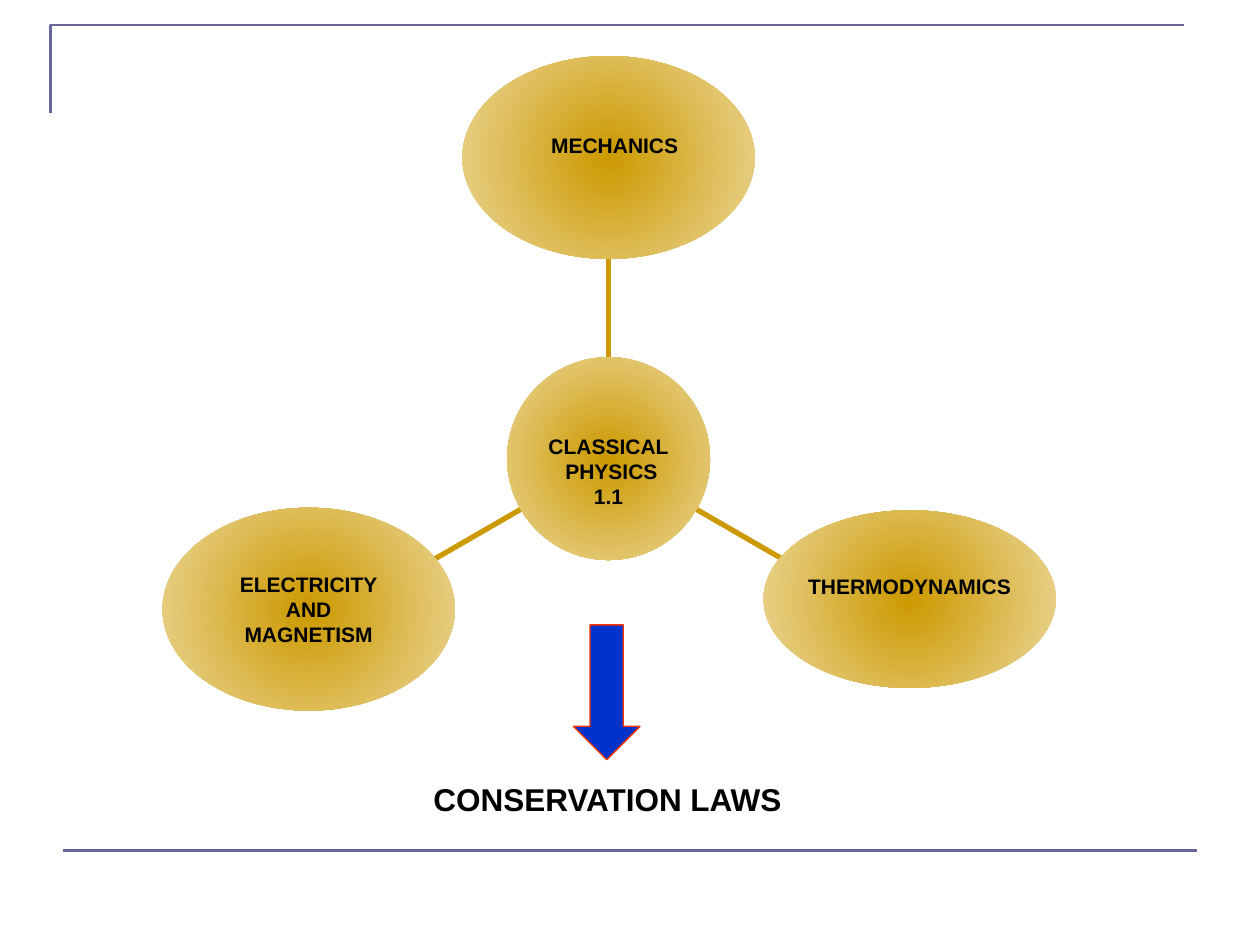
from dataclasses import dataclass
from math import cos, radians, sin

from lxml.etree import SubElement
from pptx import Presentation
from pptx.dml.color import RGBColor
from pptx.enum.shapes import MSO_CONNECTOR, MSO_SHAPE
from pptx.enum.text import MSO_ANCHOR, PP_ALIGN
from pptx.oxml.ns import qn
from pptx.util import Inches, Pt

# Grid of square cells: 100 columns by 75 rows
COLUMNS, ROWS = 100, 75
CELL = Inches(10) // COLUMNS

GOLD, PALE_GOLD = "CC9900", "EBD799"
FRAME, BLUE, RED, BLACK = "666699", "0033CC", "FF3300", "000000"

HUB_X, HUB_Y, HUB_SIZE = 48.3, 36.4, 16.1
SPOKE_START, SPOKE_END = HUB_SIZE / 2, HUB_SIZE
SPOKE_ANGLES = (150, 30, -90)


@dataclass
class Bubble:
    """An ellipse given by its centre and size, with its text insets, in cells."""
    lines: tuple[str, ...]
    x: float
    y: float
    width: float = 23.2
    height: float = 16.1
    inset_left: float = 0
    inset_top: float = 0
    inset_bottom: float = 0


BUBBLES = (
    Bubble(("ELECTRICITY", "AND", "MAGNETISM"), 24.5, 48.35),
    Bubble(("THERMODYNAMICS",), 72.2, 47.55, height=14.1, inset_bottom=2),
    Bubble(("MECHANICS",), HUB_X, 12.5, inset_left=1, inset_bottom=2),
    Bubble(("CLASSICAL", " PHYSICS", "1.1"), HUB_X, HUB_Y,
           width=HUB_SIZE, inset_top=2),
)


def cells(count: float) -> int:
    return round(count * CELL)


def rgb(hex_colour: str) -> RGBColor:
    return RGBColor.from_string(hex_colour)


def style_line(line, colour: str, points: float) -> None:
    line.color.rgb = rgb(colour)
    line.width = Pt(points)


def style_text(paragraph, size: float) -> None:
    font = paragraph.font
    font.name, font.size, font.bold = "Arial", Pt(size), True
    font.color.rgb = rgb(BLACK)


def add_line(shapes, start: tuple[float, float], end: tuple[float, float],
             colour: str, points: float) -> None:
    line = shapes.add_connector(MSO_CONNECTOR.STRAIGHT,
                                *map(cells, start + end))
    style_line(line.line, colour, points)
    SubElement(line.line._get_or_add_ln().getparent(), qn("a:effectLst"))


def fill_radial(fill, inner: str, outer: str) -> None:
    fill.gradient()
    for stop, colour in zip(fill.gradient_stops, (inner, outer)):
        stop.color.rgb = rgb(colour)
    gradient = fill._fill._gradFill
    gradient.remove(gradient.find(qn("a:lin")))
    circle = SubElement(gradient, qn("a:path"), {"path": "circle"})
    SubElement(circle, qn("a:fillToRect"), dict.fromkeys("ltrb", "50000"))


def add_bubble(shapes, bubble: Bubble) -> None:
    ellipse = shapes.add_shape(
        MSO_SHAPE.OVAL,
        cells(bubble.x - bubble.width / 2), cells(bubble.y - bubble.height / 2),
        cells(bubble.width), cells(bubble.height))
    ellipse.shadow.inherit = False
    fill_radial(ellipse.fill, GOLD, PALE_GOLD)
    ellipse.line.fill.background()

    frame = ellipse.text_frame
    frame.word_wrap = False
    frame.vertical_anchor = MSO_ANCHOR.MIDDLE
    frame.margin_left, frame.margin_right = cells(bubble.inset_left), 0
    frame.margin_top = cells(bubble.inset_top)
    frame.margin_bottom = cells(bubble.inset_bottom)
    frame.text = "\n".join(bubble.lines)
    for paragraph in frame.paragraphs:
        paragraph.alignment = PP_ALIGN.CENTER
        style_text(paragraph, 12)


def add_frame(shapes) -> None:
    """Corner rule at the top and a single rule at the bottom."""
    builder = shapes.build_freeform(4.2, 9.2, scale=CELL)
    builder.add_line_segments([(4.2, 2.5), (94.2, 2.5)], close=False)
    corner = builder.convert_to_shape()
    corner.shadow.inherit = False
    corner.fill.background()
    style_line(corner.line, FRAME, 1.5)
    add_line(shapes, (5, 67.5), (95, 67.5), FRAME, 1.5)


def add_spoke(shapes, angle: float) -> None:
    start, end = ((HUB_X + radius * cos(radians(angle)),
                   HUB_Y + radius * sin(radians(angle)))
                  for radius in (SPOKE_START, SPOKE_END))
    add_line(shapes, start, end, GOLD, 3)


def add_conclusion(shapes) -> None:
    """Caption and the arrow that leads down to it."""
    caption = shapes.add_textbox(*map(cells, (18.2, 61.4, 52.7, 4)))
    frame = caption.text_frame
    frame.word_wrap = True
    frame.margin_left = cells(16.2)
    frame.text = "CONSERVATION LAWS"
    style_text(frame.paragraphs[0], 18)

    arrow = shapes.add_shape(MSO_SHAPE.DOWN_ARROW,
                             *map(cells, (45.5, 49.6, 5.3, 10.7)))
    arrow.shadow.inherit = False
    arrow.fill.solid()
    arrow.fill.fore_color.rgb = rgb(BLUE)
    style_line(arrow.line, RED, 0.75)


def main() -> None:
    deck = Presentation()
    deck.slide_width, deck.slide_height = cells(COLUMNS), cells(ROWS)
    shapes = deck.slides.add_slide(deck.slide_layouts[6]).shapes

    add_frame(shapes)
    for angle in SPOKE_ANGLES:
        add_spoke(shapes, angle)
    for bubble in BUBBLES:
        add_bubble(shapes, bubble)
    add_conclusion(shapes)

    deck.save("out.pptx")


if __name__ == "__main__":
    main()
